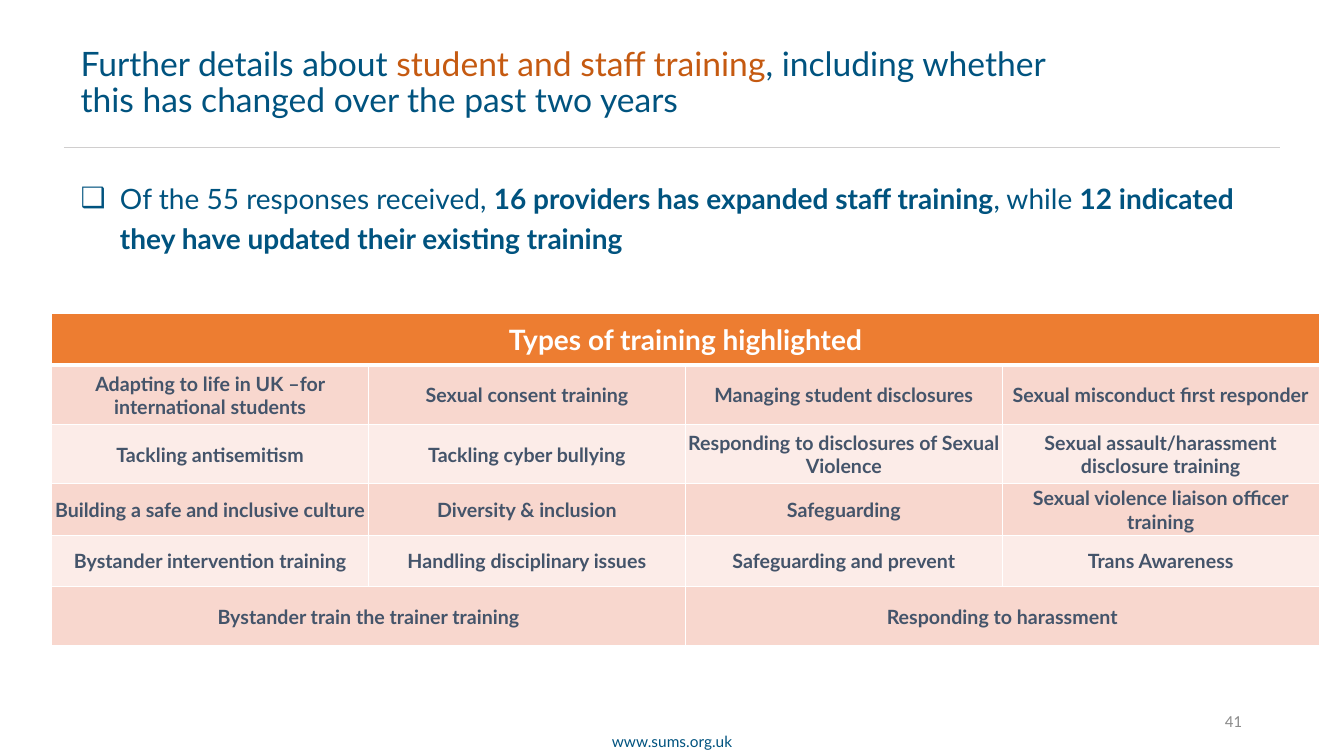
from dataclasses import dataclass

from lxml.etree import SubElement
from pptx import Presentation
from pptx.dml.color import RGBColor
from pptx.enum.shapes import MSO_CONNECTOR
from pptx.enum.text import MSO_ANCHOR, MSO_AUTO_SIZE, PP_ALIGN
from pptx.oxml.ns import qn
from pptx.util import Inches, Pt


@dataclass(frozen=True)
class Theme:
    font: str = "Lato"
    plain: str = "Calibri"
    blue: str = "00537F"
    rust: str = "C55A11"
    rule: str = "D0CECE"
    gray: str = "8C8C8C"
    slate: str = "44546A"
    white: str = "FFFFFF"
    head: str = "ED7D31"
    bands: tuple = ("F8D7CE", "FCECE8")
    title: int = 24
    body: int = 20
    cell: int = 14
    note: int = 12
    foot: int = 11


class Deck:
    """Places elements on one slide; lengths are percent of its size."""

    def __init__(self, theme):
        self.theme = theme
        self.file = Presentation()
        self.file.slide_width = Inches(13.33)
        self.file.slide_height = Inches(7.5)
        self.slide = self.file.slides.add_slide(self.file.slide_layouts[1])
        self.shapes = self.slide.shapes

    def col(self, share):
        return round(self.file.slide_width * share / 100)

    def row(self, share):
        return round(self.file.slide_height * share / 100)

    def area(self, box):
        left, top, width, height = box
        return self.col(left), self.row(top), self.col(width), self.row(height)

    def style(self, font, size, color, bold=False, face=None):
        font.name = face or self.theme.font
        font.size = Pt(size)
        font.bold = bold
        font.color.rgb = RGBColor.from_string(color)

    def fill(self, holder, box, parts, size, lead, mark=None):
        """Fill a placeholder with (text, color, bold) parts."""
        holder.left, holder.top, holder.width, holder.height = self.area(box)
        frame = holder.text_frame
        frame.word_wrap = True
        frame.auto_size = MSO_AUTO_SIZE.NONE
        frame.vertical_anchor = MSO_ANCHOR.TOP
        para = frame.paragraphs[0]
        if mark:
            props = para._p.get_or_add_pPr()
            indent = Inches(0.39)
            props.set("marL", str(indent))
            props.set("indent", str(-indent))
            SubElement(props, qn("a:buChar"), char=mark)
        para.alignment = PP_ALIGN.LEFT
        para.line_spacing = lead
        para.space_before = Pt(0)
        for text, color, bold in parts:
            run = para.add_run()
            run.text = text
            self.style(run.font, size, color, bold)

    def label(self, box, text, size, color, align, face=None):
        frame = self.shapes.add_textbox(*self.area(box)).text_frame
        frame.word_wrap = True
        frame.vertical_anchor = MSO_ANCHOR.MIDDLE
        frame.text = text
        para = frame.paragraphs[0]
        para.alignment = align
        self.style(para.runs[0].font, size, color, face=face)

    def rule(self, left, right, top):
        y = self.row(top)
        line = self.shapes.add_connector(
            MSO_CONNECTOR.STRAIGHT, self.col(left), y, self.col(right), y)
        line.line.color.rgb = RGBColor.from_string(self.theme.rule)
        line.line.width = Pt(0.5)
        SubElement(line._element.spPr, qn("a:effectLst"))

    def edge(self, cell, top, bottom):
        props = cell._tc.get_or_add_tcPr()
        for side, width in zip("LRTB", (1, 1, top, bottom)):
            line = SubElement(props, qn(f"a:ln{side}"), w=str(Pt(width)))
            paint = SubElement(line, qn("a:solidFill"))
            SubElement(paint, qn("a:srgbClr"), val=self.theme.white)

    def cell(self, cell, text, size, color):
        cell.vertical_anchor = MSO_ANCHOR.MIDDLE
        cell.margin_left = cell.margin_right = cell.margin_top = Inches(0.01)
        cell.margin_bottom = 0
        cell.text_frame.text = text
        para = cell.text_frame.paragraphs[0]
        para.alignment = PP_ALIGN.CENTER
        self.style(para.runs[0].font, size, color, True)

    def table(self, box, rows, heights):
        """Each row spreads its texts evenly over the columns."""
        theme = self.theme
        count = max(map(len, rows))
        grid = self.shapes.add_table(len(rows), count, *self.area(box)).table
        grid.first_row = grid.horz_banding = False
        for column in grid.columns:
            column.width = self.col(box[2] / count)
        for r, (texts, height) in enumerate(zip(rows, heights)):
            grid.rows[r].height = self.row(height)
            tint = theme.bands[(r - 1) % 2] if r else theme.head
            for c in range(count):
                cell = grid.cell(r, c)
                self.edge(cell, 3 if r == 1 else 1, 1 if r else 3)
                cell.fill.solid()
                cell.fill.fore_color.rgb = RGBColor.from_string(tint)
            span = count // len(texts)
            size, color = (theme.cell, theme.slate) if r else (theme.body, theme.white)
            for i, text in enumerate(texts):
                first = grid.cell(r, i * span)
                if span > 1:
                    first.merge(grid.cell(r, (i + 1) * span - 1))
                self.cell(first, text, size, color)


TRAINING = [
    ["Types of training highlighted"],
    ["Adapting to life in UK –for international students",
     "Sexual consent training", "Managing student disclosures",
     "Sexual misconduct first responder"],
    ["Tackling antisemitism", "Tackling cyber bullying",
     "Responding to disclosures of Sexual Violence",
     "Sexual assault/harassment disclosure training"],
    ["Building a safe and inclusive culture", "Diversity & inclusion",
     "Safeguarding", "Sexual violence liaison officer training"],
    ["Bystander intervention training", "Handling disciplinary issues",
     "Safeguarding and prevent", "Trans Awareness"],
    ["Bystander train the trainer training", "Responding to harassment"],
]


def main():
    theme = Theme()
    deck = Deck(theme)
    title, body = deck.slide.placeholders

    # Title and rule
    deck.fill(title, (5.25, 5.6, 76.67, 10.8), [
        ("Further details about ", theme.blue, False),
        ("student and staff training", theme.rust, False),
        (", including whether this has changed over the past two years",
         theme.blue, False),
    ], theme.title, 0.9)
    deck.rule(4.75, 95.25, 19.5)

    # Key finding
    deck.fill(body, (5.25, 22.4, 91.75, 16.8), [
        ("Of the 55 responses received, ", theme.blue, False),
        ("16 providers has expanded staff training", theme.blue, True),
        (", while ", theme.blue, False),
        ("12 indicated they have updated their existing training",
         theme.blue, True),
    ], theme.body, 1.2, "❑")

    # Training table
    deck.table((3.85, 41.5, 94.3, 44.1), TRAINING,
               (6.8, 7.85, 7.85, 6.8, 6.8, 7.85))

    # Footer
    deck.label((44.55, 96.1, 10.9, 3.85), "www.sums.org.uk", theme.foot,
               theme.blue, PP_ALIGN.CENTER)
    deck.label((70.65, 92.65, 22.5, 5.3), "41", theme.note, theme.gray,
               PP_ALIGN.RIGHT, theme.plain)

    deck.file.save("out.pptx")


if __name__ == "__main__":
    main()
